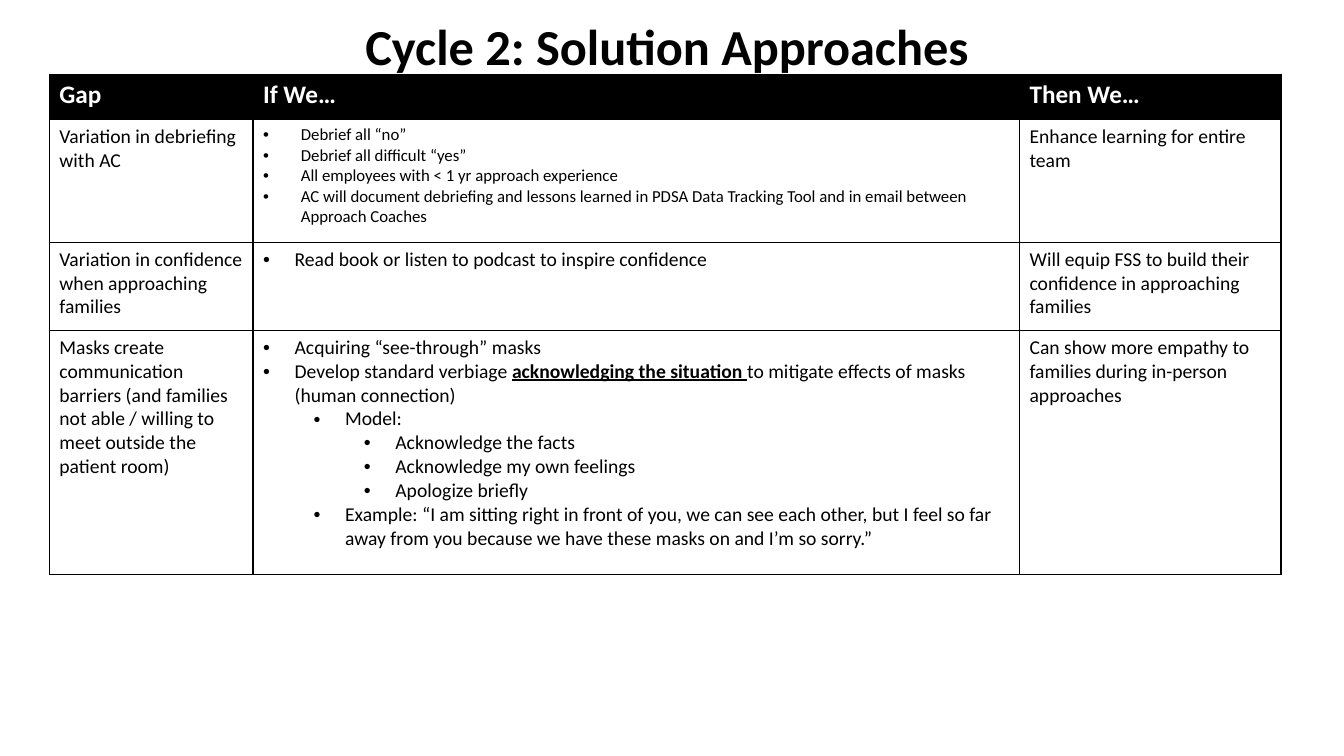
from pptx import Presentation
from pptx.dml.color import RGBColor
from pptx.enum.text import MSO_ANCHOR, PP_ALIGN
from pptx.oxml.ns import qn
from pptx.util import Pt
from lxml.etree import SubElement

BLACK = RGBColor(0x00, 0x00, 0x00)
WHITE = RGBColor(0xFF, 0xFF, 0xFF)

COLS = [194, 730, 249]
ROWS = [43, 117, 84, 232]
HEADS = ["Gap", "If We…", "Then We…"]
GAPS = [
    ("Variation in debriefing with AC", 12, 36, [
        (0, "Debrief all “no”"),
        (0, "Debrief all difficult “yes”"),
        (0, "All employees with < 1 yr approach experience"),
        (0, "AC will document debriefing and lessons learned in PDSA Data "
            "Tracking Tool and in email between Approach Coaches"),
    ], "Enhance learning for entire team"),
    ("Variation in confidence when approaching families", 14, 30, [
        (0, "Read book or listen to podcast to inspire confidence"),
    ], "Will equip FSS to build their confidence in approaching families"),
    ("Masks create communication barriers (and families not able / willing "
     "to meet outside the patient room)", 14, 30, [
        (0, "Acquiring “see-through” masks"),
        (0, "Develop standard verbiage ", "acknowledging the situation ",
         "to mitigate effects of masks (human connection)"),
        (1, "Model:"),
        (2, "Acknowledge the facts"),
        (2, "Acknowledge my own feelings"),
        (2, "Apologize briefly"),
        (1, "Example: “I am sitting right in front of you, we can see each "
            "other, but I feel so far away from you because we have these "
            "masks on and I’m so sorry.”"),
    ], "Can show more empathy to families during in-person approaches"),
]


class Deck:
    font = "Calibri"
    scale = 9525
    step = 48

    def __init__(self, width, height):
        self.show = Presentation()
        self.show.slide_width = self.px(width)
        self.show.slide_height = self.px(height)
        self.slide = self.show.slides.add_slide(self.show.slide_layouts[6])

    def px(self, count):
        return count * self.scale

    def run(self, para, text, size, color=BLACK, bold=False, under=False):
        run = para.add_run()
        run.text = text
        font = run.font
        font.name, font.size, font.bold = self.font, Pt(size), bold
        font.underline = under
        font.color.rgb = color

    def title(self, text, left, top, width, height):
        box = self.slide.shapes.add_textbox(
            *map(self.px, (left, top, width, height)))
        frame = box.text_frame
        frame.word_wrap = True
        frame.vertical_anchor = MSO_ANCHOR.TOP
        para = frame.paragraphs[0]
        para.alignment = PP_ALIGN.CENTER
        para.line_spacing = 0.9
        self.run(para, text, 36, bold=True)

    def grid(self, left, top, cols, rows):
        frame = self.slide.shapes.add_table(
            len(rows), len(cols),
            *map(self.px, (left, top, sum(cols), sum(rows))))
        table = frame.table
        table.horz_banding = False
        for col, width in zip(table.columns, cols):
            col.width = self.px(width)
        for row, height in zip(table.rows, rows):
            row.height = self.px(height)
        return table

    def frame(self, cell, thin=""):
        props = cell._tc.get_or_add_tcPr()
        for side in "LRTB":
            width = Pt(0.5 if side in thin else 1)
            line = SubElement(props, qn(f"a:ln{side}"), w=str(width))
            fill = SubElement(line, qn("a:solidFill"))
            SubElement(fill, qn("a:srgbClr"), val=str(BLACK))

    def head(self, cell, text, thin):
        self.frame(cell, thin)
        cell.fill.solid()
        cell.fill.fore_color.rgb = BLACK
        self.run(cell.text_frame.paragraphs[0], text, 18, WHITE, True)

    def body(self, cell, text):
        self.frame(cell)
        cell.fill.background()
        self.run(cell.text_frame.paragraphs[0], text, 14)

    def list(self, cell, items, size, hang):
        self.frame(cell)
        cell.fill.background()
        frame = cell.text_frame
        for spot, (level, *parts) in enumerate(items):
            para = frame.add_paragraph() if spot else frame.paragraphs[0]
            para.level = level
            props = para._p.get_or_add_pPr()
            props.set("marL", str(self.px(hang + level * self.step)))
            props.set("indent", str(self.px(-hang)))
            SubElement(props, qn("a:buFont"), typeface="Arial")
            SubElement(props, qn("a:buChar"), char="•")
            for place, part in enumerate(parts):
                strong = place == 1
                self.run(para, part, size, bold=strong, under=strong)

    def save(self):
        self.show.save("out.pptx")


def main():
    deck = Deck(1280, 720)
    deck.title("Cycle 2: Solution Approaches", 40, 16, 1191, 88)
    table = deck.grid(47, 71, COLS, ROWS)
    for col, (text, thin) in enumerate(zip(HEADS, ("LT", "T", "RT"))):
        deck.head(table.cell(0, col), text, thin)
    for row, (gap, size, hang, items, then) in enumerate(GAPS, 1):
        deck.body(table.cell(row, 0), gap)
        deck.list(table.cell(row, 1), items, size, hang)
        deck.body(table.cell(row, 2), then)
    deck.save()


if __name__ == "__main__":
    main()
